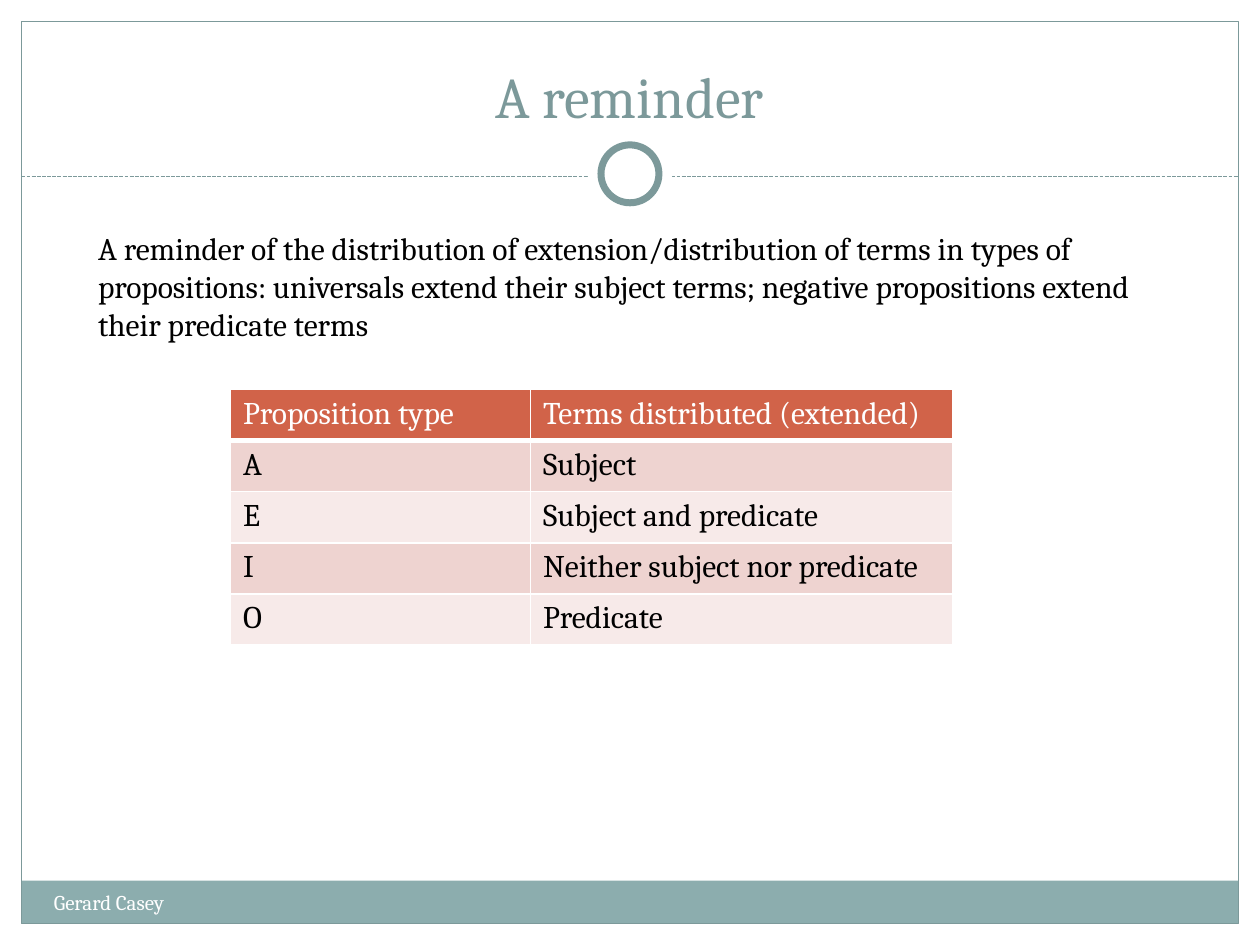
from dataclasses import dataclass

import lxml.etree
import pptx
import pptx.dml.color
import pptx.enum.dml
import pptx.enum.shapes
import pptx.enum.text
import pptx.oxml.ns
import pptx.util

Inches = pptx.util.Inches
Pt = pptx.util.Pt
MSO_SHAPE = pptx.enum.shapes.MSO_SHAPE
PP_ALIGN = pptx.enum.text.PP_ALIGN
MSO_ANCHOR = pptx.enum.text.MSO_ANCHOR


@dataclass(frozen=True)
class Theme:
    font: str = "Cambria"
    white: str = "FFFFFF"
    black: str = "000000"
    accent: str = "7C999A"
    band: str = "8CADAE"
    header: str = "D16349"
    row_fills: tuple = ("EED3D0", "F7EAE9")
    title_size: int = 33
    body_size: int = 18
    footer_size: int = 12


THEME = Theme()
PROPOSITIONS = [
    ("Proposition type", "Terms distributed (extended)"),
    ("A", "Subject"),
    ("E", "Subject and predicate"),
    ("I", "Neither subject nor predicate"),
    ("O", "Predicate"),
]


def rgb(value):
    return pptx.dml.color.RGBColor.from_string(value)


def write_text(text_frame, text, size=THEME.body_size, color=THEME.black,
               align=PP_ALIGN.LEFT, anchor=MSO_ANCHOR.TOP):
    text_frame.word_wrap = True
    text_frame.vertical_anchor = anchor
    paragraph = text_frame.paragraphs[0]
    paragraph.alignment = align
    run = paragraph.add_run()
    run.text = text
    run.font.name = THEME.font
    run.font.size = Pt(size)
    run.font.color.rgb = rgb(color)


def add_text(slide, box, text, **text_format):
    text_box = slide.shapes.add_textbox(*map(Inches, box))
    write_text(text_box.text_frame, text, **text_format)


def add_panel(slide, box, kind=MSO_SHAPE.RECTANGLE, fill=None, line=None, width=0.75):
    shape = slide.shapes.add_shape(kind, *map(Inches, box))
    shape.shadow.inherit = False
    if fill:
        shape.fill.solid()
        shape.fill.fore_color.rgb = rgb(fill)
    else:
        shape.fill.background()
    if line:
        shape.line.color.rgb = rgb(line)
        shape.line.width = Pt(width)
    else:
        shape.line.fill.background()


def add_divider(slide, left, right, top):
    line = slide.shapes.add_connector(
        pptx.enum.shapes.MSO_CONNECTOR.STRAIGHT,
        Inches(left), Inches(top), Inches(right), Inches(top))
    line.line.color.rgb = rgb(THEME.accent)
    line.line.width = Pt(0.75)
    line.line.dash_style = pptx.enum.dml.MSO_LINE.SQUARE_DOT
    properties = line._element.spPr
    lxml.etree.SubElement(properties, pptx.oxml.ns.qn("a:effectLst"))


def add_ring(slide, center_x, center_y):
    for size, line in ((0.67, None), (0.46, THEME.accent)):
        box = (center_x - size / 2, center_y - size / 2, size, size)
        add_panel(slide, box, MSO_SHAPE.OVAL, fill=THEME.white, line=line, width=4)


def add_frame(slide, box):
    left, top, width, height = box
    band_height = 0.34
    add_panel(slide, (left, top + height - band_height, width, band_height),
              fill=THEME.band)
    add_panel(slide, box, line=THEME.accent)
    add_divider(slide, left, left + width, 1.4)
    add_ring(slide, left + width / 2, 1.38)


def set_borders(cell, bottom_width):
    properties = cell._tc.get_or_add_tcPr()
    widths = {"a:lnL": 1, "a:lnR": 1, "a:lnT": 1, "a:lnB": bottom_width}
    for index, (tag, width) in enumerate(widths.items()):
        border = lxml.etree.Element(pptx.oxml.ns.qn(tag), w=str(Pt(width)))
        fill = lxml.etree.SubElement(border, pptx.oxml.ns.qn("a:solidFill"))
        lxml.etree.SubElement(fill, pptx.oxml.ns.qn("a:srgbClr"), val=THEME.white)
        properties.insert(index, border)


def add_proposition_table(slide, box, column_widths):
    table = slide.shapes.add_table(
        len(PROPOSITIONS), len(column_widths), *map(Inches, box)).table
    for column, width in zip(table.columns, column_widths):
        column.width = Inches(width)
    for row_index, values in enumerate(PROPOSITIONS):
        is_header = row_index == 0
        fill = THEME.header if is_header else THEME.row_fills[(row_index - 1) % 2]
        for column_index, value in enumerate(values):
            cell = table.cell(row_index, column_index)
            cell.fill.solid()
            cell.fill.fore_color.rgb = rgb(fill)
            write_text(cell.text_frame, value,
                       color=THEME.white if is_header else THEME.black)
            set_borders(cell, bottom_width=3 if is_header else 1)


def build_reminder_slide(presentation):
    slide = presentation.slides.add_slide(presentation.slide_layouts[6])
    add_frame(slide, (0.17, 0.17, 9.66, 7.16))
    add_text(slide, (0.33, 0.25, 9.33, 0.83), "A reminder", size=THEME.title_size,
             color=THEME.accent, align=PP_ALIGN.CENTER, anchor=MSO_ANCHOR.BOTTOM)
    add_text(slide, (0.33, 7.01, 3.92, 0.4), "Gerard Casey",
             size=THEME.footer_size, color=THEME.white)
    add_text(slide, (0.68, 1.77, 8.4, 1.01),
             "A reminder of the distribution of extension/distribution of terms in "
             "types of propositions: universals extend their subject terms; negative "
             "propositions extend their predicate terms")
    add_proposition_table(slide, (1.83, 3.09, 5.73, 2.03), (2.38, 3.35))


def main():
    presentation = pptx.Presentation()
    presentation.slide_width = Inches(10)
    presentation.slide_height = Inches(7.5)
    build_reminder_slide(presentation)
    presentation.save("out.pptx")


if __name__ == "__main__":
    main()
